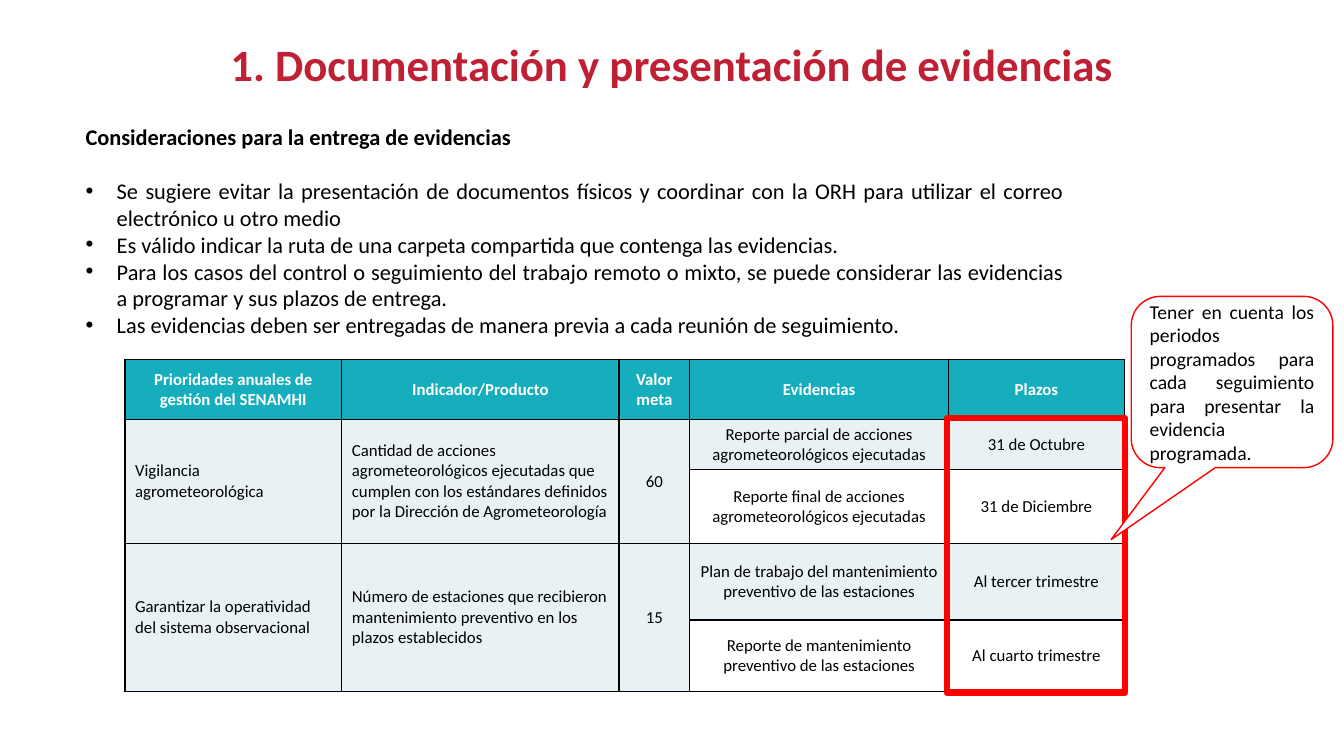
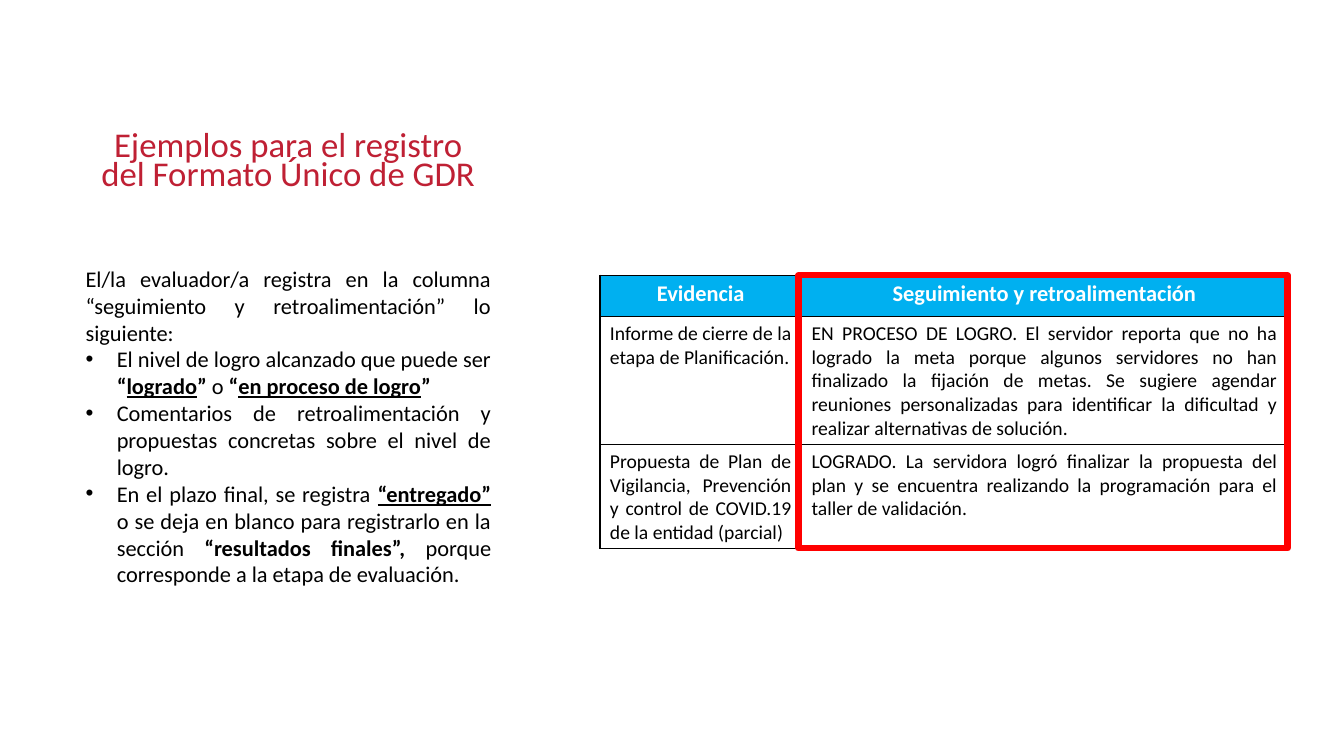
from dataclasses import dataclass

from lxml import etree
from pptx import Presentation
from pptx.dml.color import RGBColor
from pptx.enum.shapes import MSO_SHAPE
from pptx.enum.text import MSO_ANCHOR, MSO_AUTO_SIZE, PP_ALIGN
from pptx.oxml.ns import qn
from pptx.util import Inches, Pt

LEFT, CENTER, JUSTIFY = PP_ALIGN.LEFT, PP_ALIGN.CENTER, PP_ALIGN.JUSTIFY
TOP, MIDDLE, BOTTOM = MSO_ANCHOR.TOP, MSO_ANCHOR.MIDDLE, MSO_ANCHOR.BOTTOM
FIXED = MSO_AUTO_SIZE.NONE
RECTANGLE = MSO_SHAPE.RECTANGLE
CALLOUT = MSO_SHAPE.ROUNDED_RECTANGULAR_CALLOUT
TITLE_ONLY = 5
BOLD = {"bold": True}
BOLD_UNDERLINED = {"bold": True, "underline": True}


@dataclass(frozen=True)
class Theme:
    font: str = "Calibri"
    title: str = "BF2034"
    ink: str = "000000"
    paper: str = "FFFFFF"
    highlight: str = "FF0000"
    teal: str = "16ADBD"
    blue: str = "00B0F0"
    tint: str = "E8F1F4"
    title_size: float = 32
    side_title_size: float = 24.8
    body_size: float = 16
    note_size: float = 14
    small_size: float = 12
    frame_width: float = 4.5
    hairline: float = 1
    heading_gap: float = 19.5
    indent: float = 0.31


class Deck:
    def __init__(self, theme):
        self.theme = theme
        self.prs = Presentation()
        self.prs.slide_width, self.prs.slide_height = Inches(13.33), Inches(7.5)
        self.slide = None

    def add_slide(self):
        self.slide = self.prs.slides.add_slide(self.prs.slide_layouts[TITLE_ONLY])

    def set_text(self, paragraph, content, size, color=None, align=JUSTIFY, bold=False):
        """Fill a paragraph from a string or a list of (text, format) runs."""
        paragraph.alignment = align
        runs = [(content, {})] if isinstance(content, str) else content
        for text, extra in runs:
            run = paragraph.add_run()
            run.text = text
            font_values = {"name": self.theme.font, "size": Pt(size), "bold": bold, **extra}
            for attribute, value in font_values.items():
                setattr(run.font, attribute, value)
            run.font.color.rgb = RGBColor.from_string(color or self.theme.ink)

    def add_bullet(self, paragraph):
        properties = paragraph._p.get_or_add_pPr()
        properties.set("marL", str(Inches(self.theme.indent)))
        properties.set("indent", str(-Inches(self.theme.indent)))
        etree.SubElement(properties, qn("a:buFont")).set("typeface", "Arial")
        etree.SubElement(properties, qn("a:buChar")).set("char", "•")

    def title(self, text, box, size, line_spacing, anchor, bold=False):
        title = self.slide.shapes.title
        title.left, title.top, title.width, title.height = map(Inches, box)
        frame = title.text_frame
        frame.auto_size, frame.word_wrap = FIXED, True
        frame.vertical_anchor = anchor
        paragraph = frame.paragraphs[0]
        paragraph.line_spacing = line_spacing
        self.set_text(paragraph, text, size, self.theme.title, CENTER, bold)

    def bullets(self, heading, items, box, bold=False, gap=0):
        """Add a heading paragraph with a bulleted list below it."""
        frame = self.slide.shapes.add_textbox(*map(Inches, box)).text_frame
        frame.word_wrap = True
        self.set_text(frame.paragraphs[0], heading, self.theme.body_size, bold=bold)
        for position, item in enumerate(items):
            paragraph = frame.add_paragraph()
            self.add_bullet(paragraph)
            if position == 0 and gap:
                paragraph.space_before = Pt(gap)
            self.set_text(paragraph, item, self.theme.body_size)

    def outline(self, kind, box, width, fill=None):
        shape = self.slide.shapes.add_shape(kind, *map(Inches, box))
        shape.shadow.inherit = False
        shape.line.color.rgb = RGBColor.from_string(self.theme.highlight)
        shape.line.width = Pt(width)
        if fill:
            shape.fill.solid()
            shape.fill.fore_color.rgb = RGBColor.from_string(fill)
        else:
            shape.fill.background()
        return shape

    def frame(self, box):
        self.outline(RECTANGLE, box, self.theme.frame_width)

    def callout(self, text, box, adjustments):
        note = self.outline(CALLOUT, box, self.theme.hairline, self.theme.paper)
        for index, value in enumerate(adjustments):
            note.adjustments[index] = value
        note.text_frame.word_wrap = True
        note.text_frame.vertical_anchor = MIDDLE
        self.set_text(note.text_frame.paragraphs[0], text, self.theme.note_size)

    def border(self, cell):
        properties = cell._tc.get_or_add_tcPr()
        for side in ("lnL", "lnR", "lnT", "lnB"):
            line = etree.SubElement(properties, qn(f"a:{side}"), w=str(Pt(self.theme.hairline)))
            fill = etree.SubElement(line, qn("a:solidFill"))
            etree.SubElement(fill, qn("a:srgbClr"), val=self.theme.ink)

    def table(self, rows, origin, widths, heights, head_color, head_size, size,
              aligns, anchor=TOP, tinted_rows=()):
        """Add a table with a header row; None joins a cell to the one above."""
        theme = self.theme
        table = self.slide.shapes.add_table(
            len(rows), len(widths), *map(Inches, (*origin, sum(widths), sum(heights)))).table
        table.first_row = table.horz_banding = False
        for column, width in zip(table.columns, widths):
            column.width = Inches(width)
        for row, height in zip(table.rows, heights):
            row.height = Inches(height)
        for r, texts in enumerate(rows):
            for c, text in enumerate(texts):
                cell = table.cell(r, c)
                cell.vertical_anchor = anchor
                self.border(cell)
                fill = head_color if r == 0 else theme.tint if r in tinted_rows else theme.paper
                cell.fill.solid()
                cell.fill.fore_color.rgb = RGBColor.from_string(fill)
                if text is None:
                    table.cell(r - 1, c).merge(cell)
                elif r == 0:
                    self.set_text(cell.text_frame.paragraphs[0], text, head_size,
                                  theme.paper, CENTER, True)
                else:
                    self.set_text(cell.text_frame.paragraphs[0], text, size, align=aligns[c])


def evidence_slide(deck):
    theme = deck.theme
    deck.add_slide()
    deck.title("1. Documentación y presentación de evidencias", (1.22, 0.4, 10.89, 0.52),
               theme.title_size, 0.9, MIDDLE, bold=True)
    deck.bullets(
        "Consideraciones para la entrega de evidencias",
        ["Se sugiere evitar la presentación de documentos físicos y coordinar con la ORH "
         "para utilizar el correo electrónico u otro medio",
         "Es válido indicar la ruta de una carpeta compartida que contenga las evidencias.",
         "Para los casos del control o seguimiento del trabajo remoto o mixto, se puede "
         "considerar las evidencias a programar y sus plazos de entrega.",
         "Las evidencias deben ser entregadas de manera previa a cada reunión de seguimiento."],
        (0.75, 1.17, 9.9, 2.26), bold=True, gap=theme.heading_gap)
    deck.table(
        [["Prioridades anuales de gestión del SENAMHI", "Indicador/Producto", "Valor meta",
          "Evidencias", "Plazos"],
         ["Vigilancia agrometeorológica",
          "Cantidad de acciones agrometeorológicos ejecutadas que cumplen con los estándares "
          "definidos por la Dirección de Agrometeorología",
          "60", "Reporte parcial de acciones agrometeorológicos ejecutadas", "31 de Octubre"],
         [None, None, None,
          "Reporte final de acciones agrometeorológicos ejecutadas", "31 de Diciembre"],
         ["Garantizar la operatividad del sistema observacional",
          "Número de estaciones que recibieron mantenimiento preventivo en los plazos "
          "establecidos",
          "15", "Plan de trabajo del mantenimiento preventivo de las estaciones",
          "Al tercer trimestre"],
         [None, None, None,
          "Reporte de mantenimiento preventivo de las estaciones", "Al cuarto trimestre"]],
        (1.24, 3.57), (2.15, 2.75, 0.7, 2.57, 1.74), (0.59, 0.5, 0.73, 0.76, 0.71),
        theme.teal, theme.small_size, theme.small_size,
        (LEFT, LEFT, CENTER, CENTER, CENTER), MIDDLE, tinted_rows=(1, 3))
    deck.frame((9.39, 4.15, 1.77, 2.72))
    deck.callout("Tener en cuenta los periodos programados para cada seguimiento para "
                 "presentar la evidencia programada.",
                 (11.22, 2.94, 2, 1.7), (-0.6, 0.92, 0.17))


def feedback_slide(deck):
    theme = deck.theme
    deck.add_slide()
    deck.title("Ejemplos para el registro del Formato Único de GDR", (0.83, 1.25, 4.06, 0.71),
               theme.side_title_size, 0.7, BOTTOM)
    deck.bullets(
        "El/la evaluador/a registra en la columna “seguimiento y retroalimentación” "
        "lo siguiente:",
        [[("El nivel de logro alcanzado que puede ser ", {}), ("“", BOLD),
          ("logrado", BOLD_UNDERLINED), ("” ", BOLD), ("o ", {}), ("“", BOLD),
          ("en proceso de logro", BOLD_UNDERLINED), ("”", BOLD)],
         "Comentarios de retroalimentación y propuestas concretas sobre el nivel de logro.",
         [("En el plazo final, se registra ", {}), ("“entregado”", BOLD_UNDERLINED),
          (" o se deja en blanco para registrarlo en la sección ", {}),
          ("“resultados finales”, ", BOLD),
          ("porque corresponde a la etapa de evaluación.", {})]],
        (0.75, 2.58, 4.22, 3.33))
    deck.table(
        [["Evidencia", "Seguimiento y retroalimentación"],
         ["Informe de cierre de la etapa de Planificación.",
          "EN PROCESO DE LOGRO. El servidor reporta que no ha logrado la meta porque algunos "
          "servidores no han finalizado la fijación de metas. Se sugiere agendar reuniones "
          "personalizadas para identificar la dificultad y realizar alternativas de solución."],
         ["Propuesta de Plan de Vigilancia, Prevención y control de COVID.19 de la entidad "
          "(parcial)",
          "LOGRADO. La servidora logró finalizar la propuesta del plan y se encuentra "
          "realizando la programación para el taller de validación."]],
        (5.95, 2.73), (2, 4.82), (0.41, 1.27, 1.03),
        theme.blue, theme.body_size, theme.note_size, (JUSTIFY, JUSTIFY))
    deck.frame((7.92, 2.73, 4.85, 2.71))


def main():
    deck = Deck(Theme())
    evidence_slide(deck)
    feedback_slide(deck)
    deck.prs.save("out.pptx")


if __name__ == "__main__":
    main()
